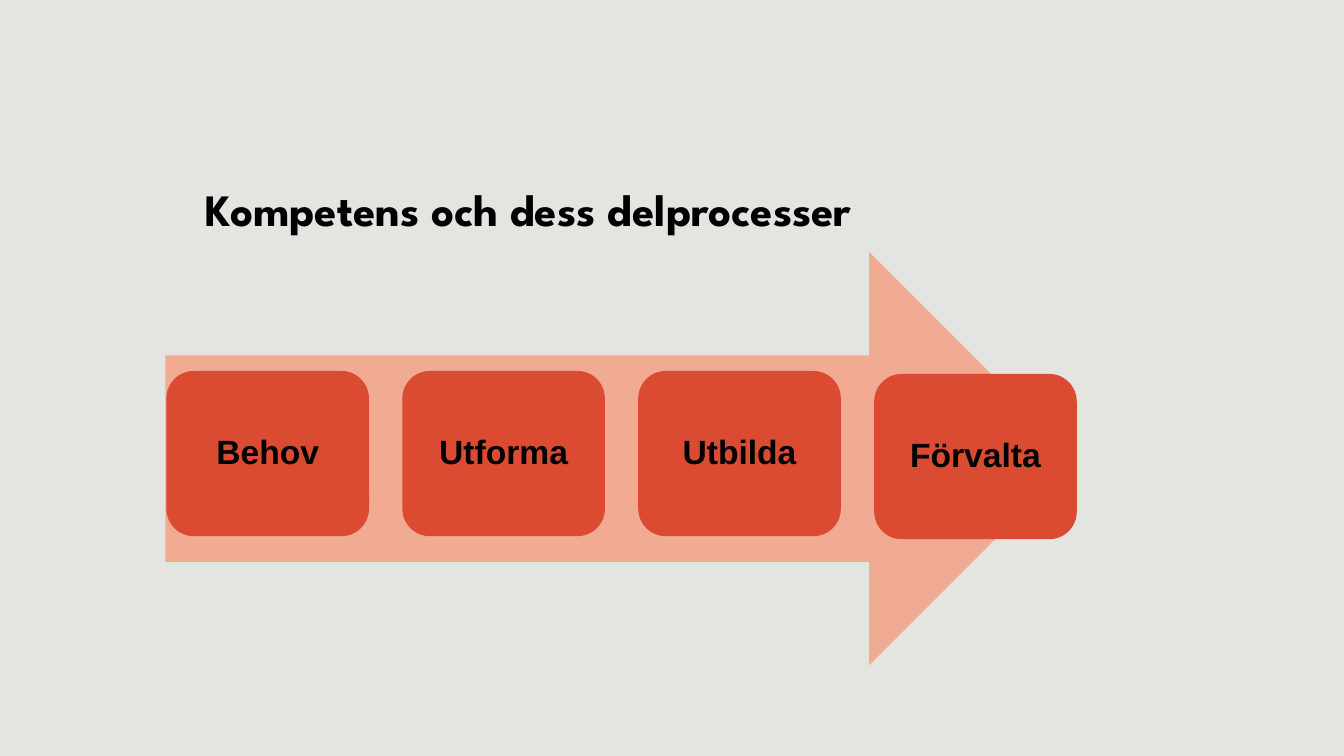
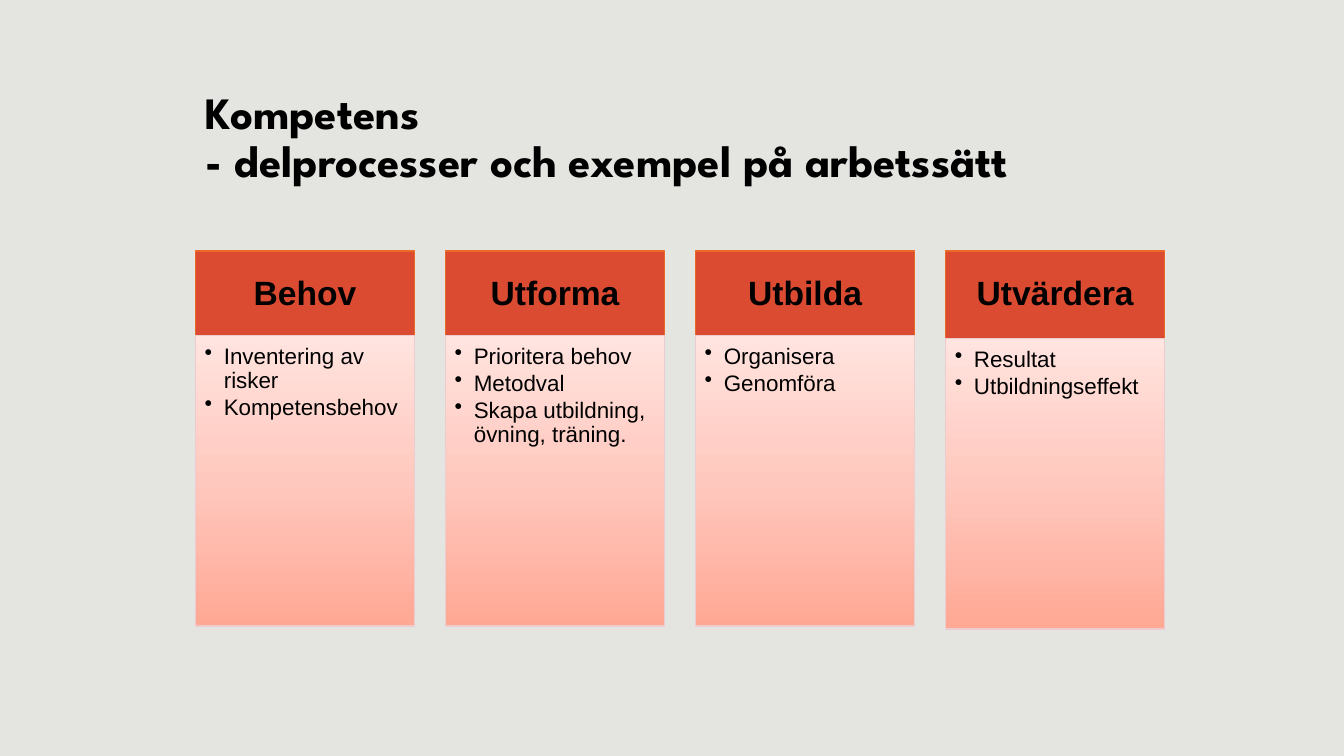
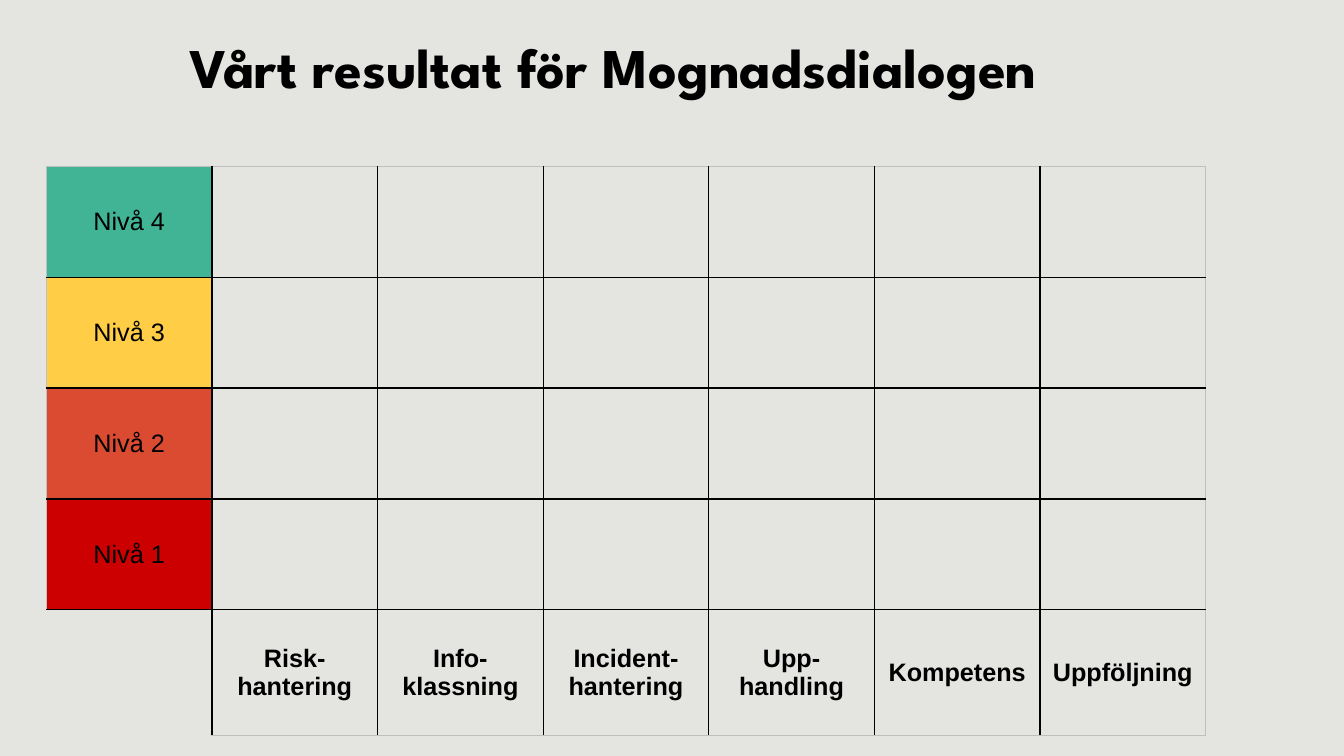
from lxml import etree
from pptx import Presentation
from pptx import util as u
from pptx.dml.color import RGBColor
from pptx.enum import shapes, text
from pptx.oxml.ns import qn

# Shared look
BACKGROUND, BLACK, RED, EDGE = "E4E4E1", "000000", "DB4B32", "BFBFBF"
TITLE = dict(name="League Spartan", bold=True)
LABEL = dict(name="Arial", size=u.Pt(24), bold=True)
BODY = dict(name="Arial", size=u.Pt(16))
CELL = dict(name="Arial", size=u.Pt(18))
BODY_GRADIENT = [(0, "FFA894"), (50, "FFC8BE"), (100, "FFE4DF")]
NO_STYLE = "{2D5ABB26-0587-4C30-8999-92F81FD0307C}"
SHAPE, ANCHOR, ALIGN = shapes.MSO_SHAPE, text.MSO_ANCHOR, text.PP_ALIGN


def rgb(value):
    return RGBColor.from_string(value)


def box(*lengths):
    return [u.Inches(n) for n in lengths]


def write(p, words, style, align=ALIGN.LEFT, spacing=0.9):
    """Fill a paragraph; a newline becomes a line break."""
    p.alignment, p.line_spacing = align, spacing
    for i, line in enumerate(words.split("\n")):
        if i:
            p.add_line_break()
        r = p.add_run()
        r.text = line
        r.font.color.rgb = rgb(BLACK)
        for key, value in style.items():
            setattr(r.font, key, value)


def set_frame(tf, anchor, left=0.1, top=0.05, right=0.1, bottom=0.05):
    tf.word_wrap, tf.vertical_anchor = True, anchor
    for side, value in dict(left=left, top=top, right=right, bottom=bottom).items():
        setattr(tf, "margin_" + side, u.Inches(value))


def add_title(s, words, place, size=32, bottom=0.05):
    tf = s.shapes.add_textbox(*box(*place)).text_frame
    set_frame(tf, ANCHOR.BOTTOM, bottom=bottom)
    write(tf.paragraphs[0], words, dict(TITLE, size=u.Pt(size)))


def add_block(s, kind, place, fill=None, line=None):
    sp = s.shapes.add_shape(kind, *box(*place))
    sp.shadow.inherit = False
    if fill:
        sp.fill.solid()
        sp.fill.fore_color.rgb = rgb(fill)
    if line:
        sp.line.color.rgb = rgb(line)
        sp.line.width = u.Pt(1)
    else:
        sp.line.fill.background()
    return sp


def add_label(sp, words, side=0.1):
    set_frame(sp.text_frame, ANCHOR.MIDDLE, side, 0.1, side, 0.1)
    write(sp.text_frame.paragraphs[0], words, LABEL, ALIGN.CENTER)


def set_gradient(sp, stops):
    sp.fill.gradient()
    sp.fill.gradient_angle = 90
    gs_list = next(sp.element.iter(qn("a:gsLst")))
    for gs in list(gs_list):
        gs_list.remove(gs)
    for position, value in stops:
        gs = etree.SubElement(gs_list, qn("a:gs"), pos=str(position * 1000))
        etree.SubElement(gs, qn("a:srgbClr"), val=value)


def add_bullets(sp, items):
    tf = sp.text_frame
    set_frame(tf, ANCHOR.TOP, 0.09, 0.09, 0.12, 0.14)
    for i, item in enumerate(items):
        p = tf.add_paragraph() if i else tf.paragraphs[0]
        pPr = p._p.get_or_add_pPr()
        indent = u.Inches(0.19)
        pPr.set("marL", str(indent))
        pPr.set("indent", str(-indent))
        etree.SubElement(pPr, qn("a:buChar"), char="•")
        p.space_after = u.Pt(2)
        write(p, item, BODY)


def set_borders(cell, colors):
    """Draw the borders named in colors (L, R, T, B); None means no line."""
    tcPr = cell._tc.get_or_add_tcPr()
    for side, value in colors.items():
        ln = etree.SubElement(tcPr, qn("a:ln" + side), w=str(u.Pt(1)))
        if value:
            fill = etree.SubElement(ln, qn("a:solidFill"))
            etree.SubElement(fill, qn("a:srgbClr"), val=value)
        else:
            etree.SubElement(ln, qn("a:noFill"))


# Slides
def process_slide(s):
    add_title(s, "Kompetens och dess delprocesser", (1.94, 1, 9.92, 1.39))
    add_block(s, SHAPE.RIGHT_ARROW, (1.64, 2.5, 9.03, 4.1), "F0AB92")
    steps = [("Behov", 3.68), ("Utforma", 3.68), ("Utbilda", 3.68), ("Förvalta", 3.71)]
    for i, (step, top) in enumerate(steps):
        place = (1.65 + 2.34 * i, top, 2.01, 1.64)
        add_label(add_block(s, SHAPE.ROUNDED_RECTANGLE, place, RED), step)


def examples_slide(s):
    add_title(s, "Kompetens\n- delprocesser och exempel på arbetssätt",
              (1.94, 0.68, 9.42, 1.23))
    columns = [
        ("Behov", 3.33, ["Inventering av risker", "Kompetensbehov"]),
        ("Utforma", 3.33, ["Prioritera behov", "Metodval",
                           "Skapa utbildning, övning, träning."]),
        ("Utbilda", 3.33, ["Organisera", "Genomföra"]),
        ("Utvärdera", 3.36, ["Resultat", "Utbildningseffekt"]),
    ]
    for i, (heading, top, items) in enumerate(columns):
        left = 1.94 + 2.48 * i
        head = add_block(s, SHAPE.RECTANGLE, (left, 2.49, 2.17, 0.87), RED, "EB6928")
        add_label(head, heading, 0.19)
        body = add_block(s, SHAPE.RECTANGLE, (left, top, 2.17, 2.88), line="ECCCCC")
        set_gradient(body, BODY_GRADIENT)
        add_bullets(body, items)


def result_slide(s):
    add_title(s, "Vårt resultat för Mognadsdialogen", (1.78, 0.26, 9.39, 1.39), 40, 0.65)
    levels = [("Nivå 4", "41B496"), ("Nivå 3", "FFCD46"),
              ("Nivå 2", RED), ("Nivå 1", "CC0000")]
    areas = ["Risk-hantering", "Info-klassning", "Incident-hantering",
             "Upp-handling", "Kompetens", "Uppföljning"]
    last_row, last_col = len(levels), len(areas)
    frame = s.shapes.add_table(last_row + 1, last_col + 1, *box(0.46, 1.65, 11.5, 5.65))
    table = frame.table
    table.first_row = table.horz_banding = False
    next(table._tbl.iter(qn("a:tableStyleId"))).text = NO_STYLE
    for col in table.columns:
        col.width = u.Inches(11.5 / (last_col + 1))
    for i, row in enumerate(table.rows):
        row.height = u.Inches(1.1 if i < last_row else 1.25)
        for j, cell in enumerate(row.cells):
            outer = None if (i, j) == (last_row, 0) else EDGE
            set_borders(cell, dict(L=BLACK if j else outer,
                                   R=BLACK if j < last_col else outer,
                                   T=BLACK if i else outer,
                                   B=BLACK if i < last_row else outer))
            cell.vertical_anchor = ANCHOR.MIDDLE
            cell.fill.background()
    # Level names down the left, areas along the bottom
    for i, (level, color) in enumerate(levels):
        cell = table.cell(i, 0)
        cell.fill.solid()
        cell.fill.fore_color.rgb = rgb(color)
        write(cell.text_frame.paragraphs[0], level, CELL, ALIGN.CENTER, 1.0)
    for j, area in enumerate(areas, 1):
        p = table.cell(last_row, j).text_frame.paragraphs[0]
        write(p, area, dict(CELL, bold=True), ALIGN.CENTER, 1.0)


def main():
    prs = Presentation()
    prs.slide_width, prs.slide_height = box(13.33, 7.5)
    fill = prs.slide_master.background.fill
    fill.solid()
    fill.fore_color.rgb = rgb(BACKGROUND)
    for build in (process_slide, examples_slide, result_slide):
        build(prs.slides.add_slide(prs.slide_layouts[6]))
    prs.save("out.pptx")


if __name__ == "__main__":
    main()
